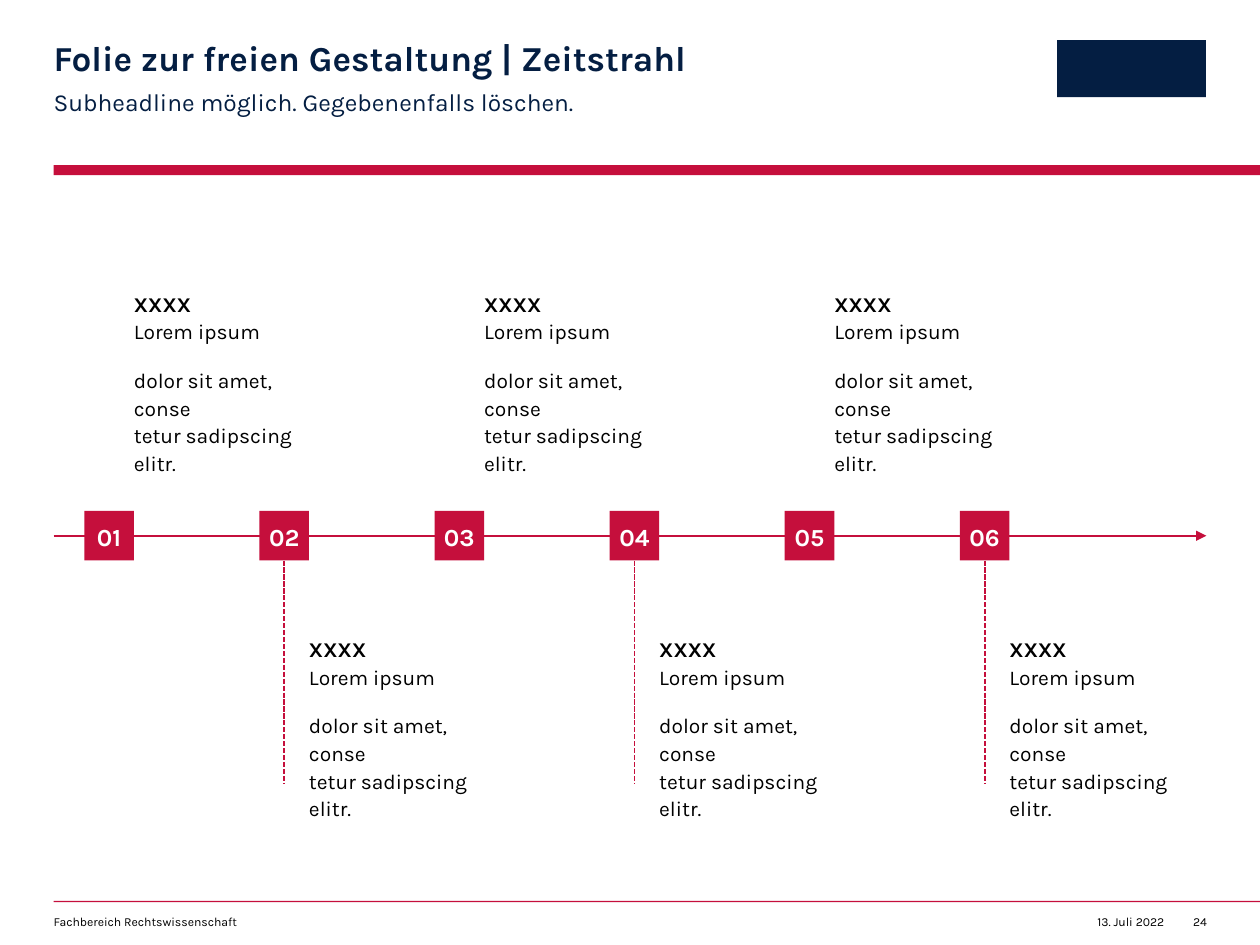
from copy import deepcopy

from lxml import etree
from pptx import Presentation
from pptx.dml.color import RGBColor
from pptx.enum.dml import MSO_LINE
from pptx.enum.shapes import MSO_CONNECTOR, MSO_SHAPE
from pptx.enum.text import MSO_ANCHOR, MSO_AUTO_SIZE, PP_ALIGN
from pptx.oxml.ns import qn
from pptx.util import Cm, Pt

RED = RGBColor(0xC5, 0x0F, 0x3C)
NAVY = RGBColor(0x04, 0x1E, 0x42)
BLACK = RGBColor(0, 0, 0)
WHITE = RGBColor(0xFF, 0xFF, 0xFF)
RECTANGLE = MSO_SHAPE.RECTANGLE
STRAIGHT = MSO_CONNECTOR.STRAIGHT
DASH = MSO_LINE.SQUARE_DOT
LEFT, CENTER, RIGHT = PP_ALIGN.LEFT, PP_ALIGN.CENTER, PP_ALIGN.RIGHT
MIDDLE = MSO_ANCHOR.MIDDLE
GROW = MSO_AUTO_SIZE.SHAPE_TO_FIT_TEXT
FONT = "Karla"

MARGIN = 1.08
AXIS_Y = 10.8
MARKER_LEFT = 1.7
MARKER_SIZE = 1
MARKER_STEP = 3.53
DASH_END = 15.8
ENTRY = "XXXX\vLorem ipsum\ndolor sit amet, conse\vtetur sadipscing elitr."


def write_text(shape, text, size=12, color=BLACK, bold=False, bold_first=False,
               align=LEFT, spacing=1.0, after=0, wrap=True, right_inset=0):
    frame = shape.text_frame
    frame.margin_left = frame.margin_top = frame.margin_bottom = 0
    frame.margin_right = Cm(right_inset)
    frame.word_wrap = wrap
    for index, block in enumerate(text.split("\n")):
        paragraph = frame.add_paragraph() if index else frame.paragraphs[0]
        paragraph.alignment = align
        paragraph.line_spacing = spacing
        paragraph.space_after = Pt(after)
        for number, line in enumerate(block.split("\v")):
            if number:
                paragraph.add_line_break()
                paragraph._p[-1].append(deepcopy(run._r.rPr))
            run = paragraph.add_run()
            run.text = line
            run.font.name = FONT
            run.font.size = Pt(size)
            run.font.color.rgb = color
            run.font.bold = bold or (bold_first and index == number == 0)


def style_connector(connector):
    connector.line.color.rgb = RED
    connector.line.width = Pt(1)
    etree.SubElement(connector._element.spPr, qn("a:effectLst"))


presentation = Presentation()
presentation.slide_width = Cm(25.4)
presentation.slide_height = Cm(19.05)
slide = presentation.slides.add_slide(presentation.slide_layouts[6])
shapes = slide.shapes

header_rule = (MARGIN, 3.33, 24.32, 0.2, RED)
footer_rule = (MARGIN, 18.16, 24.32, 0.03, RED)
logo_block = (21.31, 0.81, 3, 1.15, NAVY)
for left, top, width, height, color in (header_rule, footer_rule, logo_block):
    shape = shapes.add_shape(RECTANGLE, Cm(left), Cm(top), Cm(width), Cm(height))
    shape.shadow.inherit = False
    shape.fill.solid()
    shape.fill.fore_color.rgb = color
    shape.line.fill.background()

labels = [
    (MARGIN, 0.84, 14.25, 0.76, "Folie zur freien Gestaltung | Zeitstrahl",
     dict(size=20, color=NAVY, bold=True, spacing=0.9)),
    (MARGIN, 1.7, 14.25, 0.61, "Subheadline möglich. Gegebenenfalls löschen.",
     dict(size=14, color=NAVY, spacing=1.1, after=8, right_inset=1)),
    (MARGIN, 18.44, 11.4, 0.3, "Fachbereich Rechtswissenschaft", dict(size=7)),
    (21.97, 18.44, 1.5, 0.3, "13. Juli 2022", dict(size=7, align=RIGHT, wrap=False)),
    (24.03, 18.44, 0.3, 0.3, "24", dict(size=7, align=RIGHT, wrap=False)),
]
for left, top, width, height, text, text_format in labels:
    label = shapes.add_textbox(Cm(left), Cm(top), Cm(width), Cm(height))
    write_text(label, text, **text_format)
    label.text_frame.auto_size = GROW

axis = shapes.add_connector(STRAIGHT, Cm(MARGIN), Cm(AXIS_Y), Cm(24.32), Cm(AXIS_Y))
style_connector(axis)
etree.SubElement(axis.line._get_or_add_ln(), qn("a:tailEnd"), type="triangle")

for index in range(6):
    left = MARKER_LEFT + index * MARKER_STEP
    below = index % 2 == 1
    marker = shapes.add_shape(RECTANGLE, Cm(left), Cm(AXIS_Y - MARKER_SIZE / 2),
                              Cm(MARKER_SIZE), Cm(MARKER_SIZE))
    marker.shadow.inherit = False
    marker.fill.solid()
    marker.fill.fore_color.rgb = RED
    marker.line.fill.background()
    marker.text_frame.vertical_anchor = MIDDLE
    write_text(marker, f"{index + 1:02}", size=14, color=WHITE, bold=True,
               align=CENTER, spacing=1.1, after=12)

    entry = shapes.add_textbox(Cm(left + MARKER_SIZE), Cm(12.78 if below else 5.82),
                               Cm(3.94), Cm(2.64))
    write_text(entry, ENTRY, bold_first=True, spacing=1.1, after=12, wrap=False)
    entry.text_frame.auto_size = GROW

    if below:
        center = Cm(left + MARKER_SIZE / 2)
        stem = shapes.add_connector(STRAIGHT, center, Cm(AXIS_Y + MARKER_SIZE / 2),
                                    center, Cm(DASH_END))
        stem.begin_connect(marker, 2)
        style_connector(stem)
        stem.line.dash_style = DASH

presentation.save("out.pptx")
